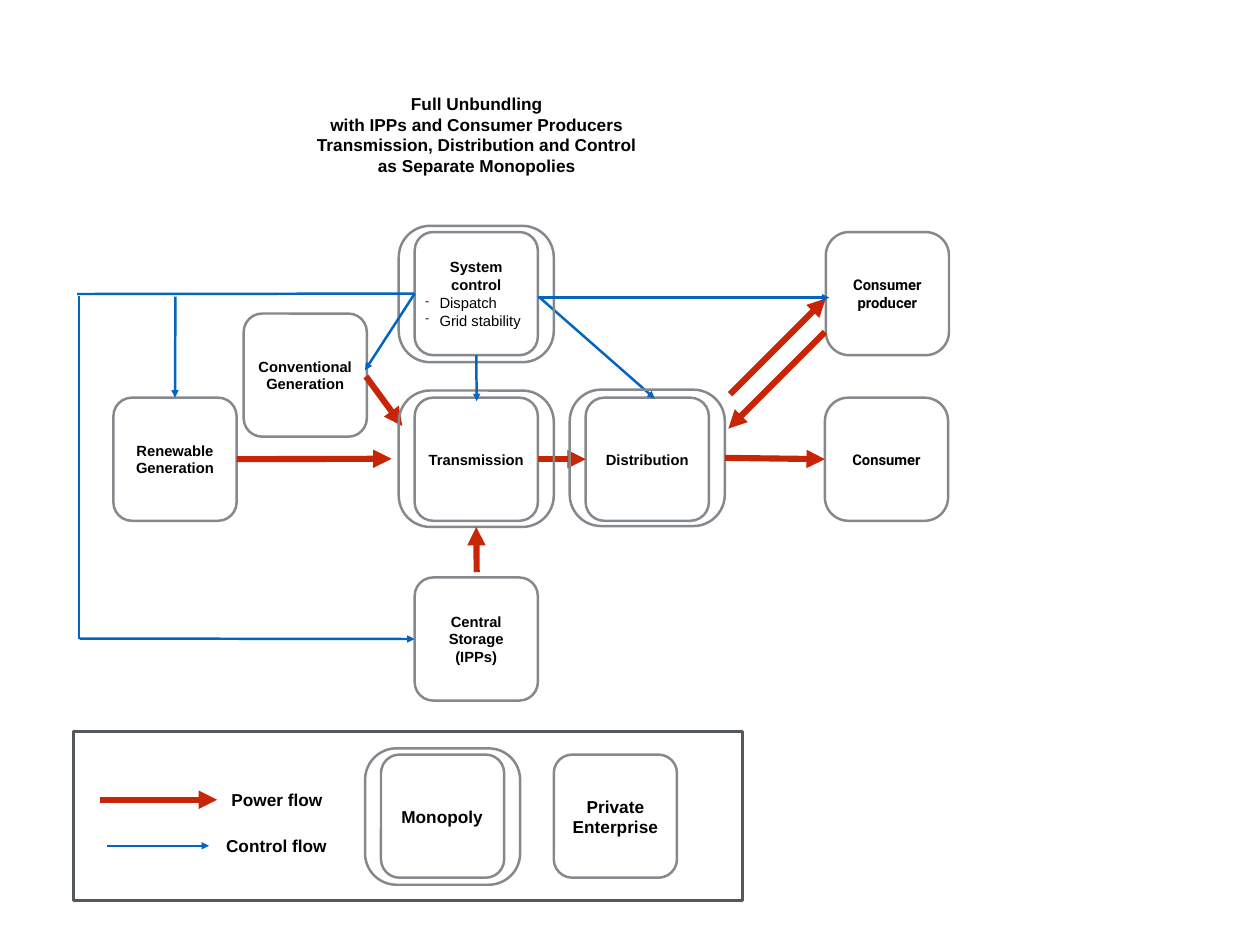
from lxml import etree
from pptx import Presentation
from pptx.dml.color import RGBColor
from pptx.enum.shapes import MSO_CONNECTOR as CONNECTOR, MSO_SHAPE as SHAPE
from pptx.enum.text import MSO_ANCHOR as ANCHOR, PP_ALIGN as ALIGN
from pptx.oxml.ns import qn
from pptx.util import Inches, Pt

COLORS = {"text": "000000", "box": "85888D", "legend": "53585F",
          "power": "C82506", "control": "0365C0"}
WIDTHS = {"power": 5, "control": 2}
BOX = 1.39
FRAME = (1.75, 1.54)
TOP, LEFT, BOTTOM, RIGHT = range(4)

presentation = Presentation()
presentation.slide_width = Inches(14.22)
presentation.slide_height = Inches(10.67)
slide = presentation.slides.add_slide(presentation.slide_layouts[6])
shapes = {}


def add_outline(kind, left, top, width, height, color="box", rounding=None):
    shape = slide.shapes.add_shape(kind, Inches(left), Inches(top), Inches(width), Inches(height))
    shape.shadow.inherit = False
    shape.fill.background()
    shape.line.color.rgb = RGBColor.from_string(COLORS[color])
    shape.line.width = Pt(2)
    if rounding:
        shape.adjustments[0] = rounding
    return shape


def write(shape, lines, size, font="Arial", wrap=True):
    frame = shape.text_frame
    frame.word_wrap = wrap
    frame.vertical_anchor = ANCHOR.MIDDLE
    frame.margin_left = frame.margin_right = Inches(0.06)
    frame.margin_top = frame.margin_bottom = Inches(0.06)
    for index, line in enumerate(lines):
        paragraph = frame.paragraphs[0] if index == 0 else frame.add_paragraph()
        bulleted = line.startswith("- ")
        paragraph.alignment = ALIGN.LEFT if bulleted else ALIGN.CENTER
        run = paragraph.add_run()
        run.text = line.removeprefix("- ")
        run.font.name = font
        run.font.size = Pt(size)
        run.font.bold = not bulleted
        run.font.color.rgb = RGBColor.from_string(COLORS["text"])
        if bulleted:
            properties = paragraph._p.get_or_add_pPr()
            properties.set("marL", str(Inches(0.16)))
            properties.set("indent", str(-Inches(0.16)))
            etree.SubElement(properties, qn("a:buSzPct")).set("val", "75000")
            etree.SubElement(properties, qn("a:buChar")).set("char", "-")


# Grid actors
for name, left, top, rounding, font, lines in [
    ("producer", 9.32, 2.62, 0.19, "Roboto", ["Consumer producer"]),
    ("consumer", 9.31, 4.49, 0.19, "Roboto", ["Consumer"]),
    ("transmission", 4.68, 4.49, 0.15, "Arial", ["Transmission"]),
    ("distribution", 6.61, 4.49, 0.15, "Arial", ["Distribution"]),
    ("conventional", 2.75, 3.54, 0.15, "Arial", ["Conventional Generation"]),
    ("renewable", 1.28, 4.49, 0.15, "Arial", ["Renewable Generation"]),
    ("system", 4.68, 2.62, 0.15, "Arial", ["System control", "- Dispatch", "- Grid stability"]),
    ("storage", 4.68, 6.52, 0.15, "Arial", ["Central Storage", "(IPPs)"]),
]:
    shapes[name] = add_outline(SHAPE.ROUNDED_RECTANGLE, left, top, BOX, BOX, rounding=rounding)
    write(shapes[name], lines, 12, font)

# Legend panel and sample boxes
add_outline(SHAPE.RECTANGLE, 0.83, 8.26, 7.55, 1.91, "legend")
for left in (4.3, 6.25):
    add_outline(SHAPE.ROUNDED_RECTANGLE, left, 8.52, BOX, BOX, rounding=0.15)

# Flows: an end is a point, or a shape name with its connection site
flows_below_frames = [
    ("power", ("transmission", RIGHT), ("distribution", LEFT), True),
    ("power", (4.13, 4.25), (4.54, 4.81), True),
    ("control", (6.08, 3.35), (7.39, 4.5), True),
]
flows_above_frames = [
    ("power", ("distribution frame", RIGHT), ("consumer", LEFT), True),
    ("power", ("renewable", RIGHT), (4.42, 5.18), True),
    ("power", (9.31, 3.75), (8.22, 4.84), True),
    ("power", (8.24, 4.45), (9.32, 3.37), True),
    ("power", (5.38, 6.46), ("transmission frame", BOTTOM), True),
    ("power", (1.13, 9.03), (2.45, 9.03), True),
    ("control", ("system", LEFT), (4.12, 4.18), True),
    ("control", ("system", BOTTOM), (5.38, 4.53), True),
    ("control", (6.07, 3.36), (9.36, 3.36), True),
    ("control", (1.98, 3.35), ("renewable", TOP), True),
    ("control", (0.87, 3.32), ("system", LEFT), False),
    ("control", (0.89, 7.22), (0.89, 3.34), False),
    ("control", (0.9, 7.21), ("storage", LEFT), True),
    ("control", (1.21, 9.55), (2.36, 9.55), True),
]
frames = [("system frame", 4.5, 2.55), ("transmission frame", 4.5, 4.41),
          ("distribution frame", 6.43, 4.4), ("legend frame", 4.12, 8.45)]

for flows, layer_frames in [(flows_below_frames, []), (flows_above_frames, frames)]:
    # Double outlines mark the monopolies
    for name, left, top in layer_frames:
        shapes[name] = add_outline(SHAPE.ROUNDED_RECTANGLE, left, top, *FRAME, rounding=0.23)

    for kind, start, end, has_arrow in flows:
        points = [(0, 0) if isinstance(point[0], str) else point for point in (start, end)]
        connector = slide.shapes.add_connector(
            CONNECTOR.STRAIGHT, *[Inches(value) for point in points for value in point])
        if isinstance(start[0], str):
            connector.begin_connect(shapes[start[0]], start[1])
        if isinstance(end[0], str):
            connector.end_connect(shapes[end[0]], end[1])
        connector.line.color.rgb = RGBColor.from_string(COLORS[kind])
        connector.line.width = Pt(WIDTHS[kind])
        if has_arrow:
            line = connector.line._get_or_add_ln()
            etree.SubElement(line, qn("a:tailEnd")).set("type", "triangle")
        etree.SubElement(connector._element.spPr, qn("a:effectLst"))

# Title and legend labels
for left, top, width, height, lines in [
    (3.49, 0.99, 3.78, 1.06, ["Full Unbundling", "with IPPs and Consumer Producers",
                              "Transmission, Distribution and Control",
                              "as Separate Monopolies"]),
    (2.55, 8.85, 1.15, 0.35, ["Power flow"]),
    (2.49, 9.37, 1.26, 0.35, ["Control flow"]),
    (4.47, 9.04, 1.04, 0.35, ["Monopoly"]),
    (6.4, 8.93, 1.09, 0.58, ["Private", "Enterprise"]),
]:
    label = slide.shapes.add_textbox(Inches(left), Inches(top), Inches(width), Inches(height))
    write(label, lines, 14, wrap=False)

presentation.save("out.pptx")
